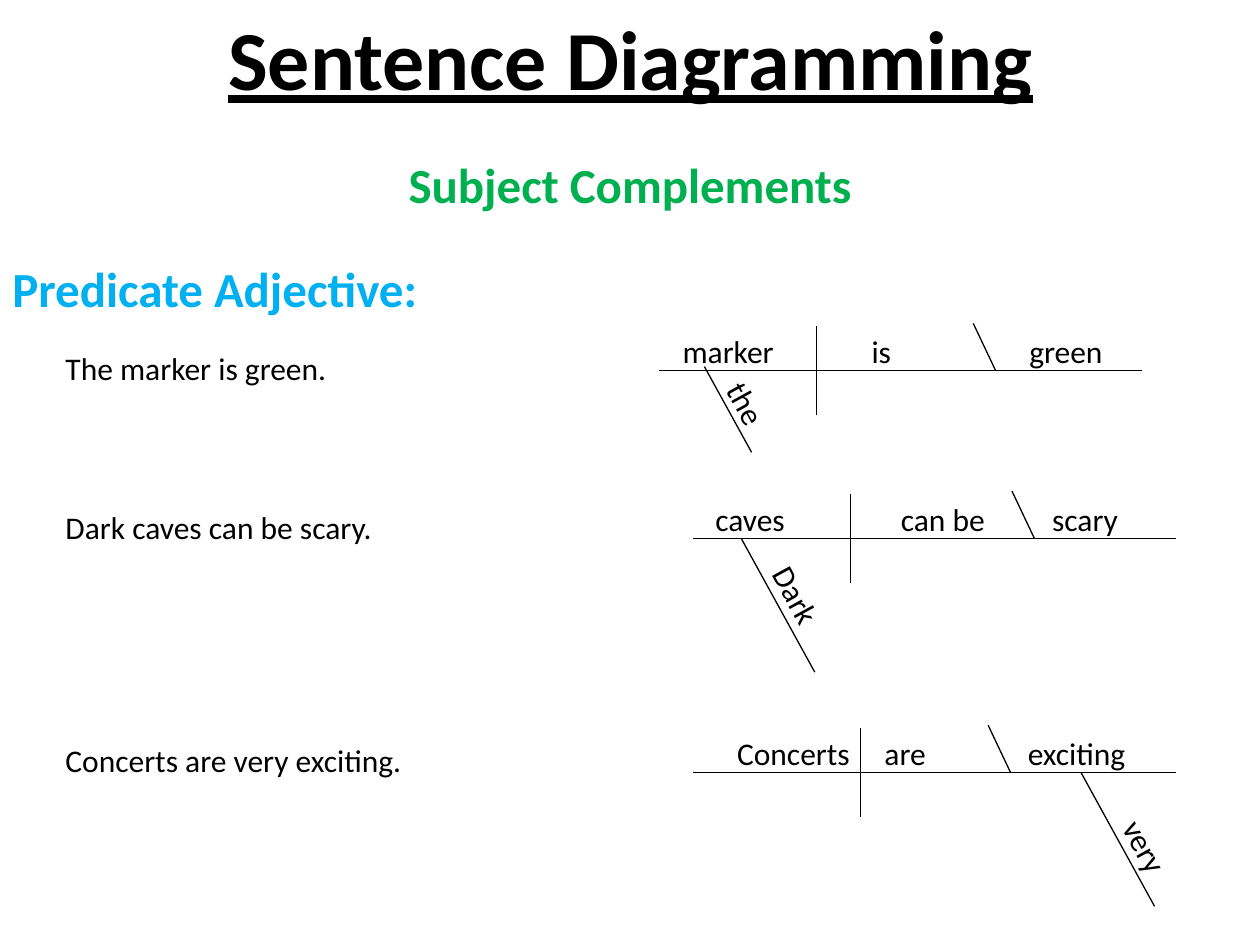
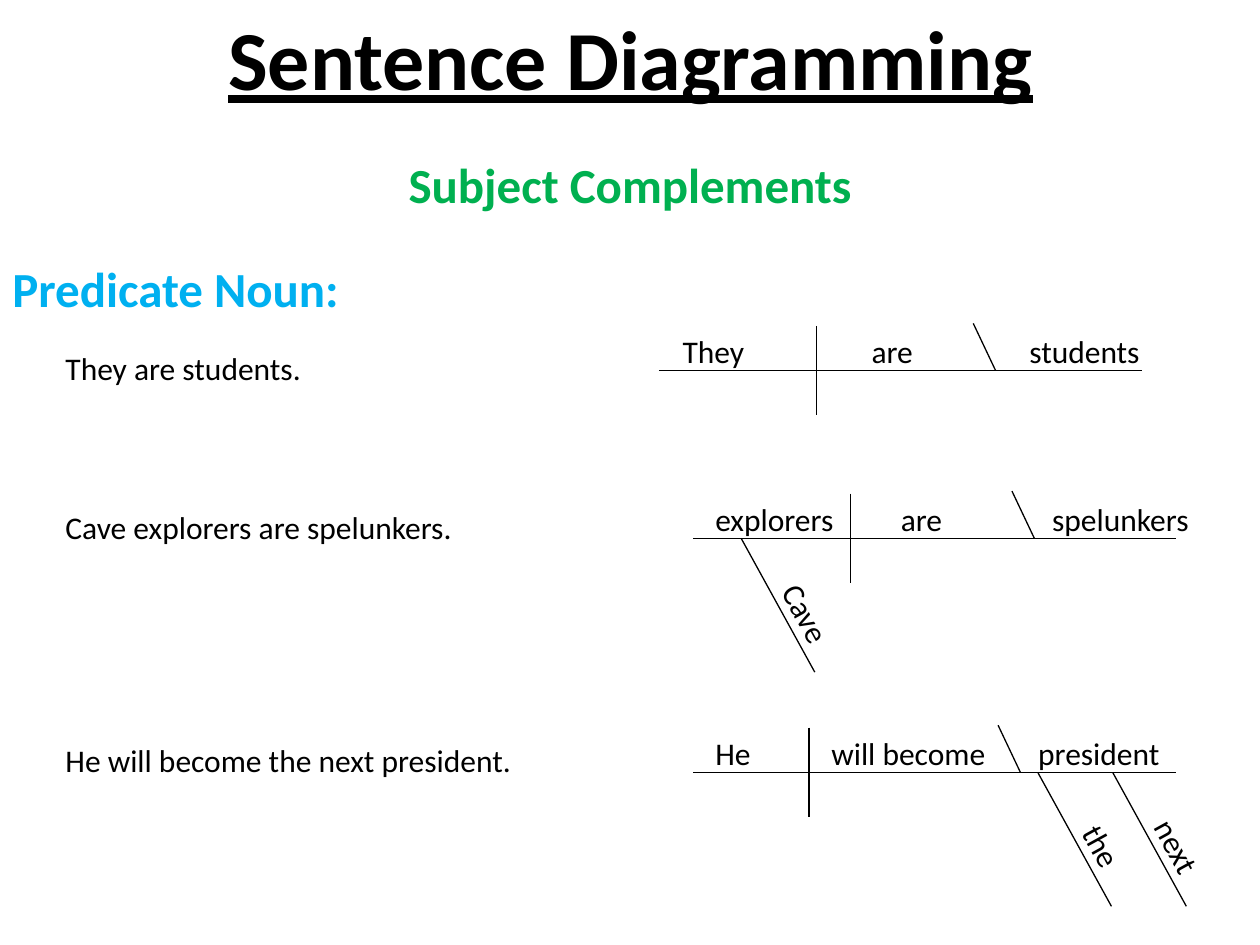
import pptx
import pptx.util
from pptx.dml.color import RGBColor
from pptx.enum.shapes import MSO_CONNECTOR
from pptx.enum.text import MSO_AUTO_SIZE, PP_ALIGN
from pptx.oxml import parse_xml
from pptx.oxml.ns import nsdecls

Cm = pptx.util.Cm

# Content: lengths in cm
COLORS = {"ink": "000000", "topic": "00B050", "kind": "00B0F0"}
FONT = "Calibri"
TITLE = "Sentence Diagramming"
TOPIC = "Subject Complements"

# Row places: base line start, base line height, sentence top
ROWS = [(13.28, 7.47, 6.91), (13.97, 10.85, 10.11), (13.97, 15.57, 14.81)]

# bars: divider x, foot of the slash x
# words: text, left, width
# mods: text, width, stroke x, stroke start below base, stroke drop, word drop
SLIDES = [
    {"kind": ("Predicate Adjective:", 10.67), "rows": [
        {"text": ("The marker is green.", 5.84), "bars": (16.46, 20.07),
         "words": [("marker", 13.51, 2.36), ("is", 17.32, 0.91),
                   ("green", 20.5, 2.01)],
         "mods": [("the", 1.4, 14.2, -0.08, 1.73, 0.68)]},
        {"text": ("Dark caves can be scary.", 6.76), "bars": (17.15, 20.85),
         "words": [("caves", 14.17, 1.93), ("can be", 17.91, 2.24),
                   ("scary", 20.96, 1.85)],
         "mods": [("Dark", 1.73, 14.94, 0, 2.7, 1.16)]},
        {"text": ("Concerts are very exciting.", 7.37), "bars": (17.35, 20.37),
         "words": [("Concerts", 14.61, 2.82), ("are", 17.58, 1.35),
                   ("exciting", 20.47, 2.51)],
         "mods": [("very", 1.63, 21.79, 0, 2.7, 1.5)]},
    ]},
    {"kind": ("Predicate Noun:", 7.42), "rows": [
        {"text": ("They are students.", 5.31), "bars": (16.46, 20.07),
         "words": [("They", 13.51, 1.78), ("are", 17.32, 1.35),
                   ("students", 20.5, 2.77)],
         "mods": []},
        {"text": ("Cave explorers are spelunkers.", 8.38),
         "bars": (17.15, 20.85),
         "words": [("explorers", 14.17, 2.92), ("are", 17.91, 1.35),
                   ("spelunkers", 20.96, 3.3)],
         "mods": [("Cave", 1.75, 14.94, 0, 2.7, 1.52)]},
        {"text": ("He will become the next president.", 9.6),
         "bars": (16.31, 20.57),
         "words": [("He", 14.17, 1.24), ("will become", 16.51, 3.66),
                   ("president", 20.68, 3)],
         "mods": [("the", 1.4, 20.92, 0, 2.7, 1.5),
                  ("next", 1.65, 22.43, 0, 2.7, 1.5)]},
    ]},
]

# Shared measures
WIDE, HIGH = 25.4, 19.05
BASE = 9.74          # base line length
RISE = 0.9           # divider above and below the base line
SLASH = (0.45, 0.95)
LINE = 1.02          # height of an 18 pt text box
SLOPE = 0.55         # sideways run of a stroke per cm of drop
GAP = 0.48           # stroke to the middle of its word
TURN = 61.2


def write(slide, text, left, top, wide, high=LINE, size=18, color="ink",
          bold=None, under=None, align=PP_ALIGN.LEFT, wrap=False, turn=0):
    box = slide.shapes.add_textbox(Cm(left), Cm(top), Cm(wide), Cm(high))
    box.rotation = turn
    frame = box.text_frame
    frame.word_wrap = wrap
    frame.auto_size = MSO_AUTO_SIZE.SHAPE_TO_FIT_TEXT
    para = frame.paragraphs[0]
    para.text = text
    para.alignment = align
    font = para.font
    font.name, font.size = FONT, pptx.util.Pt(size)
    font.bold, font.underline = bold, under
    font.color.rgb = RGBColor.from_string(COLORS[color])


def rule(slide, x1, y1, x2, y2):
    line = slide.shapes.add_connector(
        MSO_CONNECTOR.STRAIGHT, Cm(x1), Cm(y1), Cm(x2), Cm(y2))
    line.line.width = pptx.util.Pt(0.75)
    line.line.color.rgb = RGBColor.from_string(COLORS["ink"])
    line._element.spPr.append(
        parse_xml("<a:effectLst %s/>" % nsdecls("a")))


def head(slide, kind, wide):
    write(slide, TITLE, 4.27, 0, 16.89, 2.31, size=48, bold=True,
          under=True, align=PP_ALIGN.CENTER)
    write(slide, TOPIC, 0, 3, WIDE, 1.45, size=28, color="topic",
          bold=True, align=PP_ALIGN.CENTER, wrap=True)
    write(slide, kind, 0, 5.08, wide, 1.45, size=28, color="kind",
          bold=True, wrap=True)


def draw(slide, row, left, base, top):
    text, wide = row["text"]
    write(slide, text, 1.07, top, wide)

    # Base line, divider and slash
    split, foot = row["bars"]
    rule(slide, left, base, left + BASE, base)
    rule(slide, split, base - RISE, split, base + RISE)
    rule(slide, foot - SLASH[0], base - SLASH[1], foot, base)
    for word, x, wide in row["words"]:
        write(slide, word, x, base - RISE, wide)

    # Slanted modifiers
    for word, wide, x, start, drop, down in row["mods"]:
        y = base + start
        rule(slide, x, y, x + SLOPE * drop, y + drop)
        mid = x + SLOPE * down + GAP
        write(slide, word, mid - wide / 2, base + down - LINE / 2, wide,
              turn=TURN)


def main():
    deck = pptx.Presentation()
    deck.slide_width, deck.slide_height = Cm(WIDE), Cm(HIGH)
    for page in SLIDES:
        slide = deck.slides.add_slide(deck.slide_layouts[6])
        head(slide, *page["kind"])
        for row, place in zip(page["rows"], ROWS):
            draw(slide, row, *place)
    deck.save("out.pptx")


if __name__ == "__main__":
    main()
